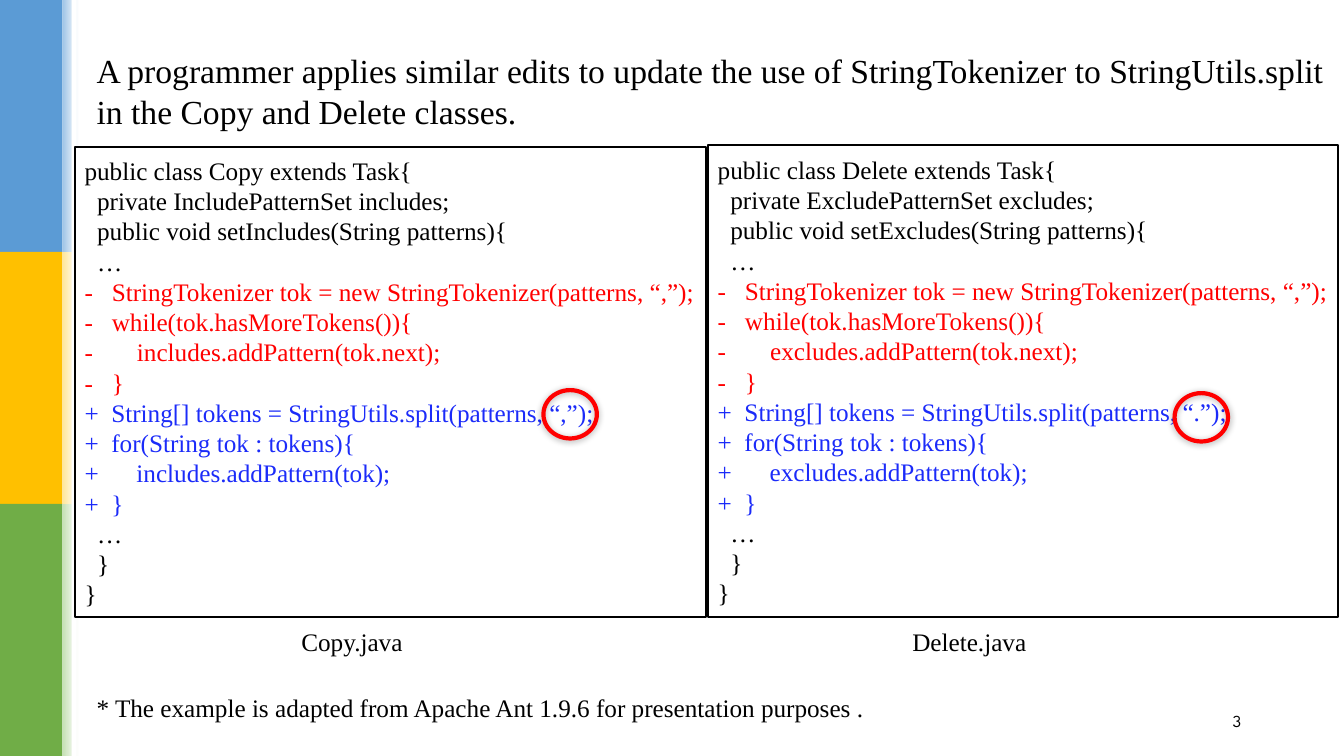
import pptx
import pptx.dml.color
import pptx.enum.shapes
import pptx.enum.text
import pptx.oxml
import pptx.util
from pptx.util import Inches

RGBColor = pptx.dml.color.RGBColor
MSO_SHAPE = pptx.enum.shapes.MSO_SHAPE
PP_ALIGN = pptx.enum.text.PP_ALIGN
MSO_ANCHOR = pptx.enum.text.MSO_ANCHOR

BLACK = RGBColor(0x00, 0x00, 0x00)
WHITE = RGBColor(0xFF, 0xFF, 0xFF)
RED = RGBColor(0xFF, 0x00, 0x00)
ADDED_BLUE = RGBColor(0x1B, 0x2B, 0xF9)
BANDS = [
    (RGBColor(0x5B, 0x9B, 0xD5), RGBColor(0x9D, 0xC3, 0xE6)),
    (RGBColor(0xFF, 0xC0, 0x00), RGBColor(0xFF, 0xE6, 0x99)),
    (RGBColor(0x70, 0xAD, 0x47), RGBColor(0xC5, 0xE0, 0xB4)),
]
LINE_COLORS = {"-": RED, "+": ADDED_BLUE}
SERIF = "Times New Roman"

SHADOW = (
    '<a:effectLst xmlns:a="http://schemas.openxmlformats.org/drawingml/2006/main">'
    '<a:outerShdw blurRad="63500" dist="12700" dir="5400000" rotWithShape="0">'
    '<a:srgbClr val="000000"><a:alpha val="32000"/></a:srgbClr>'
    "</a:outerShdw></a:effectLst>"
)

CODE = """public class {name} extends Task{{
  private {kind}PatternSet {field};
  public void set{kind}s(String patterns){{
  …
-   StringTokenizer tok = new StringTokenizer(patterns, “,”);
-   while(tok.hasMoreTokens()){{
-       {field}.addPattern(tok.next);
-   }}
+  String[] tokens = StringUtils.split(patterns, “{separator}”);
+  for(String tok : tokens){{
+      {field}.addPattern(tok);
+  }}
  …
  }}
}}"""

presentation = pptx.Presentation()
presentation.slide_width = Inches(13.33)
presentation.slide_height = Inches(7.5)
slide = presentation.slides.add_slide(presentation.slide_layouts[6])


def add_shape(kind, left, top, width, height):
    shape = slide.shapes.add_shape(
        kind, Inches(left), Inches(top), Inches(width), Inches(height))
    shape.shadow.inherit = False
    shape.line.fill.background()
    return shape


def add_text(left, top, width, height, text, size, font=SERIF):
    box = slide.shapes.add_textbox(
        Inches(left), Inches(top), Inches(width), Inches(height))
    box.text_frame.word_wrap = True
    run = box.text_frame.paragraphs[0].add_run()
    run.text = text
    run.font.size = pptx.util.Pt(size)
    run.font.name = font
    run.font.color.rgb = BLACK
    return box


# Colour bands along the left edge
for index, (color, tint) in enumerate(BANDS):
    band = add_shape(MSO_SHAPE.RECTANGLE, 0, 2.5 * index, 0.62, 2.5)
    band.fill.solid()
    band.fill.fore_color.rgb = color
    fade = add_shape(MSO_SHAPE.RECTANGLE, 0.62, 2.5 * index, 0.16, 2.5)
    fade.fill.gradient()
    fade.fill.gradient_angle = 0
    for stop, stop_color, position in zip(fade.fill.gradient_stops, (tint, WHITE), (0, 1)):
        stop.color.rgb = stop_color
        stop.position = position
strip = add_shape(MSO_SHAPE.RECTANGLE, 0.71, 0, 0.05, 7.5)
strip.fill.solid()
strip.fill.fore_color.rgb = WHITE

# Code panels
panels = [
    ((0.74, 1.46, 6.26, 4.66), "Copy", "Include", ","),
    ((7.02, 1.44, 6.25, 4.68), "Delete", "Exclude", "."),
]
for bounds, name, kind, separator in panels:
    panel = add_shape(MSO_SHAPE.RECTANGLE, *bounds)
    panel.fill.solid()
    panel.fill.fore_color.rgb = WHITE
    panel.line.color.rgb = BLACK
    panel.line.width = pptx.util.Pt(1.5)
    frame = panel.text_frame
    frame.word_wrap = True
    frame.vertical_anchor = MSO_ANCHOR.MIDDLE
    code = CODE.format(name=name, kind=kind, field=kind.lower() + "s", separator=separator)
    for number, line in enumerate(code.split("\n")):
        paragraph = frame.add_paragraph() if number else frame.paragraphs[0]
        paragraph.alignment = PP_ALIGN.LEFT
        run = paragraph.add_run()
        run.text = line
        run.font.size = pptx.util.Pt(18)
        run.font.name = SERIF
        run.font.color.rgb = LINE_COLORS.get(line[0], BLACK)

# Heading, file names and footnote
add_text(0.86, 0.45, 12.48, 0.91,
         "A programmer applies similar edits to update the use of StringTokenizer "
         "to StringUtils.split in the Copy and Delete classes.", 24)
add_text(2.89, 6.16, 1.22, 0.4, "Copy.java", 18)
add_text(8.95, 6.16, 1.79, 0.4, "Delete.java", 18)
add_text(0.86, 6.82, 12.48, 0.4,
         "* The example is adapted from Apache Ant 1.9.6 for presentation purposes .", 18)

# Slide number
number_box = add_text(8.83, 6.95, 3.58, 0.4, "3", 12, "League Spartan")
number_box.text_frame.vertical_anchor = MSO_ANCHOR.MIDDLE
number_box.text_frame.paragraphs[0].alignment = PP_ALIGN.RIGHT

# Rings around the differing separators
for left, top in [(5.39, 3.87), (11.65, 3.9)]:
    ring = add_shape(MSO_SHAPE.OVAL, left, top, 0.53, 0.48)
    ring.fill.background()
    ring.line.color.rgb = RED
    ring.line.width = pptx.util.Pt(3)
    properties = ring.element.spPr
    properties.replace(properties.find(pptx.oxml.ns.qn("a:effectLst")),
                       pptx.oxml.parse_xml(SHADOW))

presentation.save("out.pptx")
